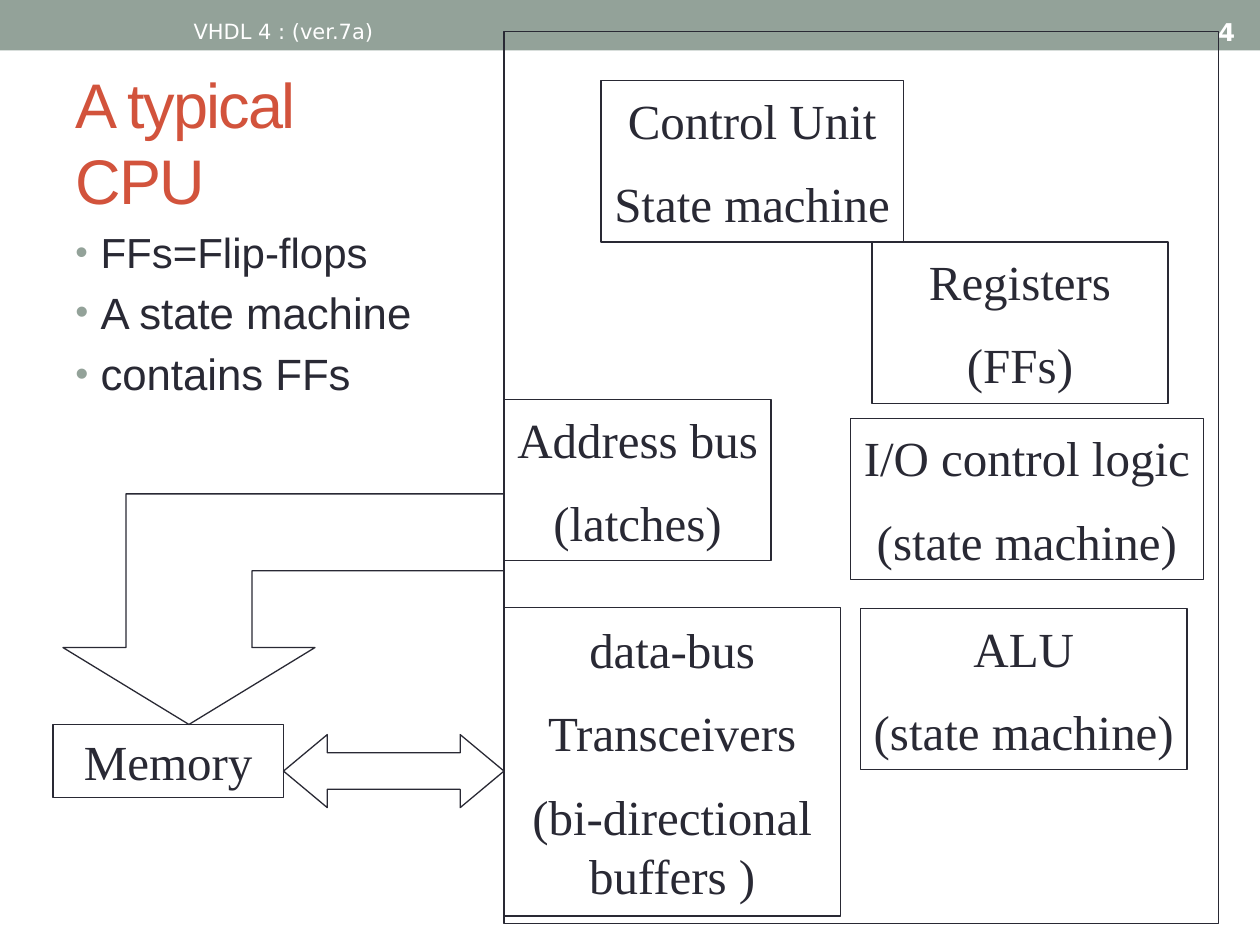
from lxml import etree
from pptx import Presentation
from pptx.dml.color import RGBColor
from pptx.enum.shapes import MSO_SHAPE
from pptx.enum.text import MSO_ANCHOR, PP_ALIGN
from pptx.oxml.ns import qn
from pptx.util import Inches, Pt

RECTANGLE = MSO_SHAPE.RECTANGLE
DOUBLE_ARROW = MSO_SHAPE.LEFT_RIGHT_ARROW
MIDDLE, TOP = MSO_ANCHOR.MIDDLE, MSO_ANCHOR.TOP
CENTER, LEFT = PP_ALIGN.CENTER, PP_ALIGN.LEFT

INK, SAGE, RUST, WHITE = "292934", "93A299", "D2533C", "FFFFFF"
BLOCK_FORMAT = {"name": "Times New Roman", "size": Pt(28)}
TITLE_FORMAT = {"name": "Arial", "size": Pt(36)}
HEADER_FORMAT = {"name": "DejaVu Sans", "size": Pt(12)}
NUMBER_FORMAT = {"name": "DejaVu Sans", "size": Pt(14), "bold": True}

BLOCKS = [
    ((6.83, 4.83, 2.59, 1.28), ["ALU", "(state machine)"], False),
    ((4.77, 0.64, 2.4, 1.28), ["Control Unit", "State machine"], False),
    ((6.75, 3.32, 2.8, 1.28), ["I/O control logic", "(state machine)"], False),
    ((6.92, 1.92, 2.35, 1.28), ["Registers", "(FFs)"], True),
    ((4, 4.82, 2.67, 2.45),
     ["data-bus", "Transceivers", "(bi-directional buffers )"], True),
    ((0.42, 5.75, 1.83, 0.58), ["Memory"], True),
    ((4, 3.17, 2.12, 1.28), ["Address bus", "(latches)"], True),
]
BULLETS = [("FFs=Flip-flops", 24), ("A state machine", 25), ("contains FFs", 25)]
ADDRESS_ARROW = [
    (1.5, 5.75), (2.5, 5.14), (2, 5.14), (2, 4.53), (4, 4.53),
    (4, 3.92), (1, 3.92), (1, 5.14), (0.5, 5.14),
]


def color(value):
    """Turn a hex string into a colour."""
    return RGBColor.from_string(value)


def write_paragraph(paragraph, text, font_format, font_color, align=LEFT, before=0):
    """Write one formatted paragraph."""
    paragraph.text = text
    paragraph.alignment = align
    paragraph.space_before = Pt(before)
    for run in paragraph.runs:
        for name, value in font_format.items():
            setattr(run.font, name, value)
        run.font.color.rgb = color(font_color)


def write_lines(frame, lines, font_format, font_color, align=LEFT, before=0):
    """Write each line as its own paragraph."""
    for index, line in enumerate(lines):
        paragraph = frame.add_paragraph() if index else frame.paragraphs[0]
        write_paragraph(paragraph, line, font_format, font_color, align, before)


def outline(shape):
    """Give a shape a thin dark line and no fill or shadow."""
    shape.shadow.inherit = False
    shape.fill.background()
    shape.line.color.rgb = color(INK)
    shape.line.width = Pt(0.75)


def add_outlined(slide, kind, box):
    """Add an unfilled preset shape."""
    shape = slide.shapes.add_shape(kind, *map(Inches, box))
    outline(shape)
    return shape


def add_block(slide, box, lines, wrap):
    """Add a labelled block of the CPU diagram."""
    frame = add_outlined(slide, RECTANGLE, box).text_frame
    frame.word_wrap = wrap
    frame.vertical_anchor = MIDDLE
    write_lines(frame, lines, BLOCK_FORMAT, INK, CENTER, 14)


def add_text(slide, box, anchor=MIDDLE):
    """Add a wrapping text box and return its text frame."""
    frame = slide.shapes.add_textbox(*map(Inches, box)).text_frame
    frame.word_wrap = True
    frame.vertical_anchor = anchor
    return frame


def add_header(slide):
    """Add the header band with its caption and slide number."""
    band = slide.shapes.add_shape(RECTANGLE, 0, 0, Inches(10), Inches(0.4))
    band.shadow.inherit = False
    band.fill.solid()
    band.fill.fore_color.rgb = color(SAGE)
    band.line.fill.background()
    caption = add_text(slide, (0, 0.07, 4.5, 0.36))
    write_lines(caption, ["VHDL 4 : (ver.7a)"], HEADER_FORMAT, WHITE, CENTER)
    number = add_text(slide, (9.57, 0.07, 0.42, 0.36))
    write_lines(number, ["4"], NUMBER_FORMAT, WHITE)


def add_title(slide):
    """Add the title with tightened letter spacing."""
    frame = add_text(slide, (0.5, 0.58, 9, 1.08))
    write_lines(frame, ["A typical \vCPU"], TITLE_FORMAT, RUST)
    for run in frame.paragraphs[0].runs:
        run.font._element.set("spc", "-100")


def add_bullet(paragraph):
    """Give a paragraph a hanging round bullet."""
    properties = paragraph._p.get_or_add_pPr()
    properties.set("marL", str(Inches(0.2)))
    properties.set("indent", str(Inches(-0.2)))
    bullet_color = etree.SubElement(properties, qn("a:buClr"))
    etree.SubElement(bullet_color, qn("a:srgbClr"), val=SAGE)
    etree.SubElement(properties, qn("a:buSzPct"), val="85000")
    etree.SubElement(properties, qn("a:buFont"), typeface="Arial")
    etree.SubElement(properties, qn("a:buChar"), char="•")


def add_bullets(slide):
    """Add the bulleted notes on the left."""
    frame = add_text(slide, (0.5, 1.75, 9, 5.33), TOP)
    for index, (text, size) in enumerate(BULLETS):
        paragraph = frame.add_paragraph() if index else frame.paragraphs[0]
        font_format = {"name": "Arial", "size": Pt(size)}
        write_paragraph(paragraph, text, font_format, INK, before=5)
        add_bullet(paragraph)


def add_address_arrow(slide):
    """Add the bent arrow from the address bus to memory."""
    start, *rest = [(Inches(x), Inches(y)) for x, y in ADDRESS_ARROW]
    builder = slide.shapes.build_freeform(*start)
    builder.add_line_segments(rest, close=True)
    outline(builder.convert_to_shape())


def add_data_arrow(slide):
    """Add the two-way arrow between memory and the data bus."""
    arrow = add_outlined(slide, DOUBLE_ARROW, (2.25, 5.83, 1.75, 0.58))
    arrow.adjustments[0] = 0.5
    arrow.adjustments[1] = 0.6


def main():
    """Build and save the slide."""
    presentation = Presentation()
    presentation.slide_width = Inches(10)
    presentation.slide_height = Inches(7.5)
    slide = presentation.slides.add_slide(presentation.slide_layouts[6])
    add_header(slide)
    add_title(slide)
    add_bullets(slide)
    add_outlined(slide, RECTANGLE, (4, 0.25, 5.67, 7.08))
    add_data_arrow(slide)
    add_address_arrow(slide)
    for box, lines, wrap in BLOCKS:
        add_block(slide, box, lines, wrap)
    presentation.save("out.pptx")


if __name__ == "__main__":
    main()
